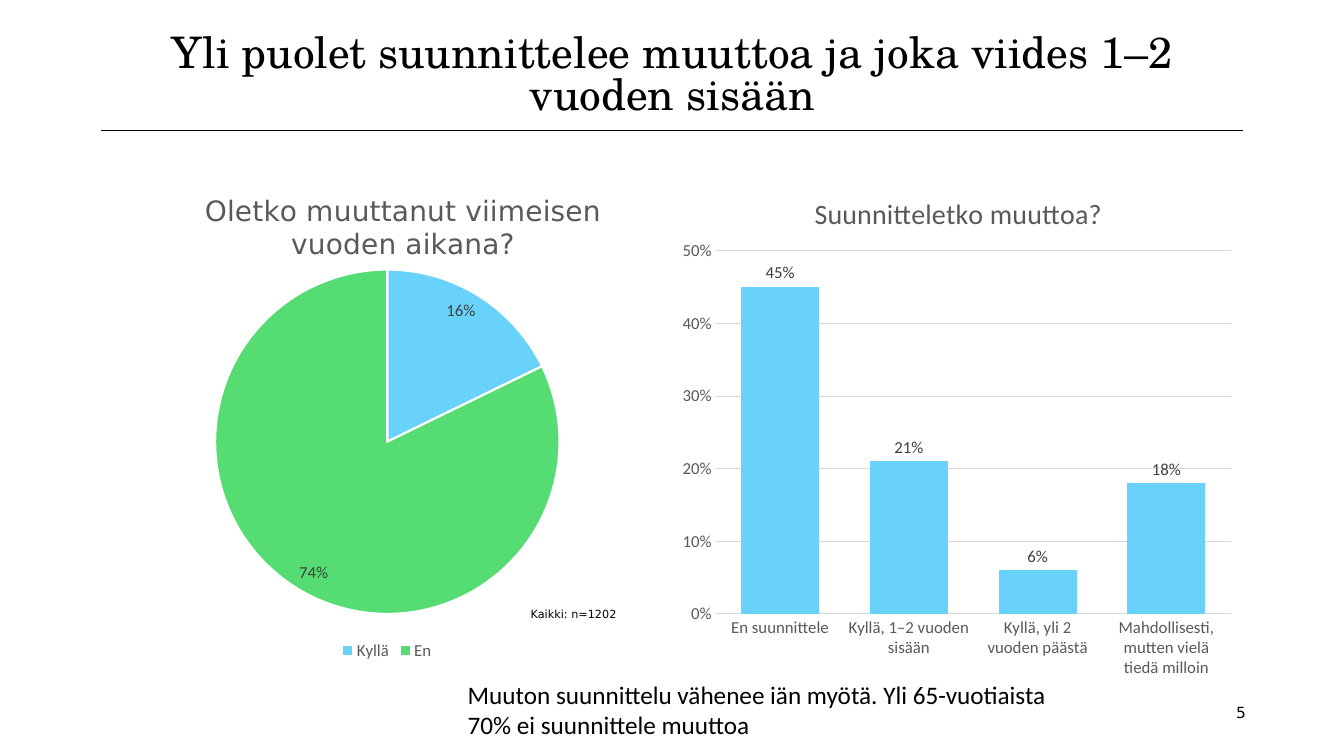
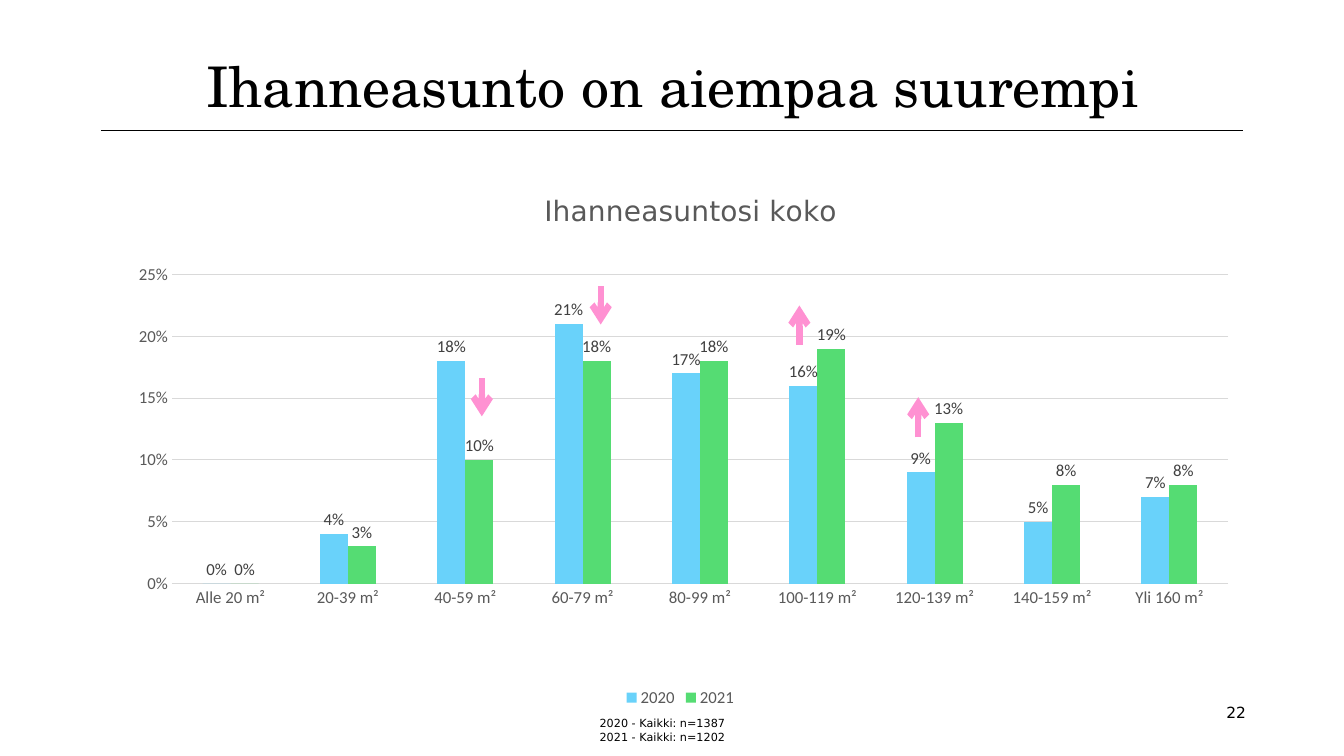
from dataclasses import dataclass

from lxml import etree
from pptx import Presentation
from pptx.chart import data as cd
from pptx.dml.color import RGBColor
from pptx.enum import chart as ce, shapes, text
from pptx.oxml.ns import qn
from pptx.util import Pt


@dataclass(frozen=True)
class Theme:
    ink: str = "000000"
    paper: str = "FFFFFF"
    gray: str = "595959"
    label: str = "404040"
    grid: str = "D9D9D9"
    blue: str = "69D2FA"
    green: str = "55DC73"
    pink: str = "FF91D2"
    serif: str = "TeX Gyre Schola"
    sans: str = "DejaVu Sans"
    body: str = "Calibri"
    head: int = 20
    lead: int = 18
    tick: int = 12
    page: int = 11
    base: int = 10
    note: int = 8


T = Theme()
WIDE, HIGH = 960, 540
LEFT, RIGHT = 72, 888
PIE = ce.XL_CHART_TYPE.PIE
BAR = ce.XL_CHART_TYPE.COLUMN_CLUSTERED


def rgb(color):
    return RGBColor.from_string(color)


def style(font, size, color=T.ink, face=T.body):
    font.size = Pt(size)
    font.name = face
    font.bold = False
    font.color.rgb = rgb(color)


def fill(part, color):
    part.format.fill.solid()
    part.format.fill.fore_color.rgb = rgb(color)


def write(slide, box, lines, size, face, align=text.PP_ALIGN.LEFT,
          anchor=text.MSO_ANCHOR.TOP, wrap=True, inset=None, gap=0, lead=None):
    frame = slide.shapes.add_textbox(*map(Pt, box)).text_frame
    frame.word_wrap = wrap
    frame.vertical_anchor = anchor
    if inset is not None:
        frame.margin_left = frame.margin_right = Pt(inset)
        frame.margin_top = frame.margin_bottom = Pt(inset)
    frame.text = "\n".join(lines)
    for para in frame.paragraphs:
        para.alignment = align
        para.space_before = para.space_after = Pt(gap)
        if lead:
            para.line_spacing = lead
        style(para.font, size, face=face)


def rule(slide, start, end, color, width, arrow=False):
    line = slide.shapes.add_connector(
        shapes.MSO_CONNECTOR.STRAIGHT, *map(Pt, start + end))
    line.line.color.rgb = rgb(color)
    line.line.width = Pt(width)
    if arrow:
        etree.SubElement(line.get_or_add_ln(), qn("a:tailEnd"), type="arrow")
    etree.SubElement(line._element.spPr, qn("a:effectLst"))


def place(part, spot, size, index):
    for old in part.findall(qn("c:layout")):
        part.remove(old)
    layout = etree.Element(qn("c:layout"))
    part.insert(index, layout)
    manual = etree.SubElement(layout, qn("c:manualLayout"))
    items = [("xMode", "edge"), ("yMode", "edge")]
    if len(spot) == 4:
        items.insert(0, ("layoutTarget", "inner"))
    items += [(key, value / full)
              for key, value, full in zip("xywh", spot, size * 2)]
    for key, value in items:
        etree.SubElement(manual, qn("c:" + key), val=str(value))


def graph(slide, kind, box, title, face, cats, series, spot, plot, legend, form="0%"):
    data = cd.CategoryChartData(number_format=form)
    data.categories = cats
    for name, values in series:
        data.add_series(name, values)
    chart = slide.shapes.add_chart(kind, *map(Pt, box), data).chart
    style(chart.font, T.base)
    chart.has_title = True
    frame = chart.chart_title.text_frame
    frame.text = title
    style(frame.paragraphs[0].font, T.head, T.gray, face)
    chart.chart_title.include_in_layout = False
    chart.has_legend = legend
    if legend:
        chart.legend.position = ce.XL_LEGEND_POSITION.BOTTOM
        chart.legend.include_in_layout = False
        style(chart.legend.font, T.tick, T.gray)
    group = chart.plots[0]
    group.vary_by_categories = kind == PIE
    group.has_data_labels = True
    labels = group.data_labels
    labels.show_value = True
    labels.show_percentage = False
    labels.number_format = form
    labels.number_format_is_linked = False
    ends = ce.XL_LABEL_POSITION
    labels.position = ends.INSIDE_END if kind == PIE else ends.OUTSIDE_END
    style(labels.font, T.tick, T.label)
    root = chart._chartSpace
    place(root.find(".//" + qn("c:title")), spot, box[2:], 1)
    place(root.find(".//" + qn("c:plotArea")), plot, box[2:], 0)
    return chart


def pie(slide, box, title, cats, values, spot, plot):
    chart = graph(slide, PIE, box, title, T.sans, cats, [("Series 1", values)],
                  spot, plot, True)
    for i, color in enumerate((T.blue, T.green)):
        point = chart.plots[0].series[0].points[i]
        fill(point, color)
        point.format.line.color.rgb = rgb(T.paper)
        point.format.line.width = Pt(1.5)


def bars(slide, box, title, face, cats, series, spot, plot, top, step,
         gap, lap=0, legend=False, form="0%"):
    chart = graph(slide, BAR, box, title, face, cats, series, spot, plot, legend, form)
    group = chart.plots[0]
    group.gap_width = gap
    group.overlap = lap
    for item, color in zip(group.series, (T.blue, T.green)):
        fill(item, color)
        item.invert_if_negative = False
    cat, val = chart.category_axis, chart.value_axis
    for axis in (cat, val):
        axis.major_tick_mark = axis.minor_tick_mark = ce.XL_TICK_MARK.NONE
        style(axis.tick_labels.font, T.tick, T.gray)
    val.minimum_scale = 0
    val.maximum_scale = top
    val.major_unit = step
    val.tick_labels.number_format = form
    val.tick_labels.number_format_is_linked = False
    val.format.line.fill.background()
    val.has_major_gridlines = True
    for part in (cat, val.major_gridlines):
        part.format.line.color.rgb = rgb(T.grid)
        part.format.line.width = Pt(0.75)


def base(deck, title, size, page, lead=None):
    slide = deck.slides.add_slide(deck.slide_layouts[6])
    rule(slide, (LEFT, 93), (RIGHT, 93), T.ink, 0.5)
    write(slide, (643, 498, 254, 22), [page], T.page, T.sans,
          text.PP_ALIGN.RIGHT, text.MSO_ANCHOR.MIDDLE, gap=10)
    write(slide, (LEFT + 0.7, 21, 815, 64), [title], size, T.serif,
          text.PP_ALIGN.CENTER, text.MSO_ANCHOR.BOTTOM, inset=0, gap=10, lead=lead)
    return slide


def moves(deck):
    slide = base(deck, "Yli puolet suunnittelee muuttoa ja joka viides 1–2 vuoden sisään",
                 31, "5", 0.8)
    pie(slide, (72.7, 116.6, 407.5, 358), "Oletko muuttanut viimeisen vuoden aikana?",
        ["Kyllä", "En"], [0.16, 0.74], (70, 17), (81, 76, 246, 246))
    bars(slide, (480.2, 116.6, 407.5, 374.4), "Suunnitteletko muuttoa?", T.body,
         ["En suunnittele", "Kyllä, 1–2 vuoden sisään", "Kyllä, yli 2 vuoden päästä",
          "Mahdollisesti, mutten vielä tiedä milloin"],
         [("Series 1", [0.45, 0.21, 0.06, 0.18])],
         (98, 18), (31, 62.6, 368, 259.4), 0.5, 0.1, 65, -27, form="###0%")
    write(slide, (372, 430, 78, 17), ["Kaikki: n=1202"], T.note, T.sans, wrap=False)
    write(slide, (327, 481.7, 430.5, 51),
          ["Muuton suunnittelu vähenee iän myötä. Yli 65-vuotiaista 70% ei suunnittele muuttoa"],
          T.lead, T.body)


def sizes(deck):
    slide = base(deck, "Ihanneasunto on aiempaa suurempi", 40, "22")
    spans = [f"{low}-{low + 19}" for low in range(20, 160, 20)]
    bars(slide, (84.2, 122.4, 803.5, 386), "Ihanneasuntosi koko", T.sans,
         [f"{span} m²" for span in ["Alle 20", *spans, "Yli 160"]],
         [("2020", [0, 0.04, 0.18, 0.21, 0.17, 0.16, 0.09, 0.05, 0.07]),
          ("2021", [0, 0.03, 0.1, 0.18, 0.18, 0.19, 0.13, 0.08, 0.08])],
         (301, 11), (38.6, 73.7, 754.5, 220.8), 0.25, 0.05, 219, legend=True)
    for x, start, end in ((571, 246.2, 218.2), (344.2, 270, 297.4),
                          (429.1, 204.5, 231.8), (655.9, 312.5, 283.7)):
        rule(slide, (x, start), (x, end), T.pink, 4.5, True)
    write(slide, (421.2, 508.3, 118, 36),
          ["2020 - Kaikki: n=1387", "2021 - Kaikki: n=1202"], T.note, T.sans)


def main():
    deck = Presentation()
    deck.slide_width, deck.slide_height = Pt(WIDE), Pt(HIGH)
    moves(deck)
    sizes(deck)
    deck.save("out.pptx")


if __name__ == "__main__":
    main()
